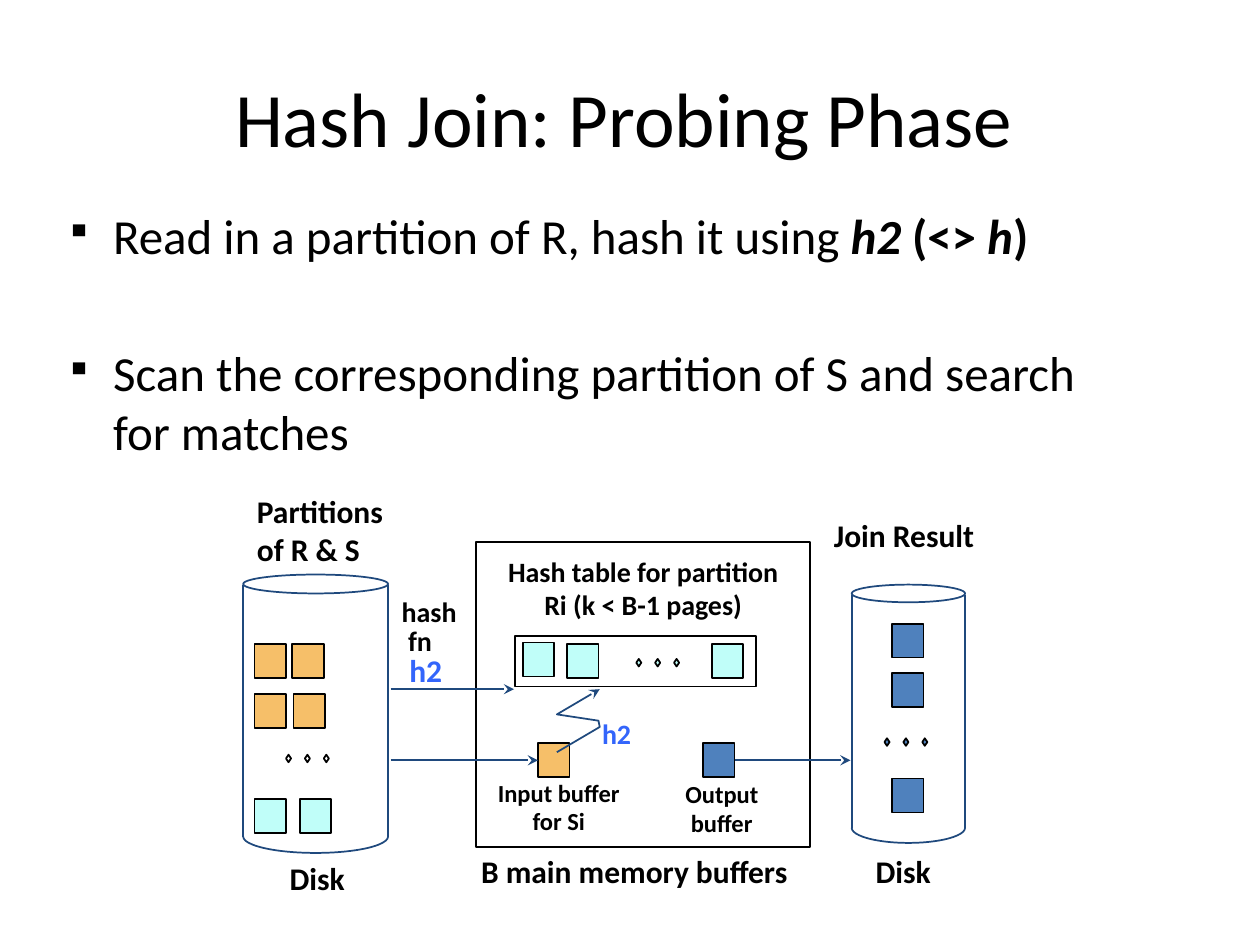
"""Build the slide that explains the probing phase of a hash join."""
from lxml import etree
from pptx import Presentation
from pptx.dml.color import RGBColor
from pptx.enum import shapes, text
from pptx.oxml import ns
from pptx.util import Inches, Pt

BLACK = RGBColor(0x00, 0x00, 0x00)
ORANGE = RGBColor(0xF6, 0xBF, 0x69)
CYAN = RGBColor(0xC0, 0xFE, 0xF9)
BLUE = RGBColor(0x4F, 0x81, 0xBD)
NAVY = RGBColor(0x1F, 0x49, 0x7D)
BRIGHT_BLUE = RGBColor(0x33, 0x65, 0xFB)
FONT = "Calibri"
LEFT, CENTER = text.PP_ALIGN.LEFT, text.PP_ALIGN.CENTER
RECTANGLE = shapes.MSO_SHAPE.RECTANGLE
STRAIGHT = shapes.MSO_CONNECTOR.STRAIGHT
PAGE = (0.25, 0.27)

presentation = Presentation()
presentation.slide_width, presentation.slide_height = Inches(10), Inches(7.5)
slide = presentation.slides.add_slide(presentation.slide_layouts[6])


def add_text(content, box, size=18, bold=True, color=BLACK, align=LEFT, wrap=False):
    shape = slide.shapes.add_textbox(*map(Inches, box))
    frame = shape.text_frame
    frame.text = content
    frame.word_wrap = wrap
    if not wrap:
        frame.auto_size = text.MSO_AUTO_SIZE.SHAPE_TO_FIT_TEXT
    for paragraph in frame.paragraphs:
        paragraph.alignment = align
        for run in paragraph.runs:
            run.font.name, run.font.size = FONT, Pt(size)
            run.font.bold, run.font.color.rgb = bold, color
    return frame


def style(shape, line=BLACK, fill=None, arrow=False):
    shape.line.color.rgb, shape.line.width = line, Pt(1)
    if fill is not None:
        shape.fill.solid()
        shape.fill.fore_color.rgb = fill
    elif hasattr(shape, "fill"):
        shape.fill.background()
    properties = shape.element.spPr
    if arrow:
        outline = properties.find(ns.qn("a:ln"))
        etree.SubElement(outline, ns.qn("a:tailEnd"), type="stealth")
    etree.SubElement(properties, ns.qn("a:effectLst"))
    return shape


title = add_text("Hash Join: Probing Phase", (0.08, 0.3, 9.75, 1.25),
                 size=44, bold=False, align=CENTER, wrap=True)
title.vertical_anchor = text.MSO_ANCHOR.MIDDLE

body = add_text("Read in a partition of R, hash it using \n"
                "Scan the corresponding partition of S and search \vfor matches",
                (0.42, 1.58, 9.25, 5.42), size=28, bold=False, wrap=True)
for words, italic in (("h2", True), (" (<> ", False), ("h", True), (")", False)):
    run = body.paragraphs[0].add_run()
    run.text = words
    run.font.name, run.font.size = FONT, Pt(28)
    run.font.bold, run.font.italic, run.font.color.rgb = True, italic, BLACK
for paragraph, space in zip(body.paragraphs, (6, 45)):
    paragraph.space_before = Pt(space)
    bullet = paragraph._p.get_or_add_pPr()
    bullet.set("marL", str(Inches(0.38)))
    bullet.set("indent", str(Inches(-0.38)))
    etree.SubElement(bullet, ns.qn("a:buSzPct"), val="75000")
    etree.SubElement(bullet, ns.qn("a:buChar"), char="▪")

for left, top, width, height, sag, bottom in (
    (1.93, 4.56, 1.15, 0.15, 0.13, 6.64),
    (6.76, 4.64, 0.9, 0.14, 0.12, 6.57),
):
    style(slide.shapes.add_shape(shapes.MSO_SHAPE.OVAL, *map(
        Inches, (left, top, width, height))), line=NAVY)
    for x in (left, left + width):
        style(slide.shapes.add_connector(STRAIGHT, *map(
            Inches, (x, top + 0.08, x, bottom))), line=NAVY)
    arc = slide.shapes.add_shape(shapes.MSO_SHAPE.ARC, *map(
        Inches, (left, bottom - sag, width, 2 * sag)))
    arc.adjustments[0], arc.adjustments[1] = 0, 108
    style(arc, line=NAVY)

for box in ((3.78, 4.3, 2.65, 2.42), (4.09, 5.05, 1.91, 0.4)):
    style(slide.shapes.add_shape(RECTANGLE, *map(Inches, box)))

pages = {
    ORANGE: ((2.02, 5.11), (2.32, 5.11), (2.02, 5.51), (2.33, 5.51)),
    CYAN: ((2.38, 6.34), (2.02, 6.34), (4.15, 5.1), (4.5, 5.11), (5.65, 5.11)),
    BLUE: ((7.08, 4.95), (7.08, 5.34), (7.08, 6.18)),
}
for color, places in pages.items():
    for place in places:
        style(slide.shapes.add_shape(RECTANGLE, *map(Inches, place + PAGE)), fill=color)

input_buffer, output_buffer = [
    style(slide.shapes.add_shape(RECTANGLE, *map(Inches, (left, 5.9) + PAGE)), fill=color)
    for left, color in ((4.27, ORANGE), (5.58, BLUE))
]

for left, top, color in ((2.27, 5.99, None), (5.05, 5.23, CYAN), (7.02, 5.86, BLUE)):
    for step in range(3):
        style(slide.shapes.add_shape(shapes.MSO_SHAPE.DIAMOND, *map(
            Inches, (left + 0.15 * step, top, 0.04, 0.06))), fill=color)

for content, box, size, color, align in (
    ("Partitions\nof R & S", (1.94, 3.86, 1.25, 0.7), 18, BLACK, LEFT),
    ("Hash table for partition\nRi (k < B-1 pages)", (3.88, 4.35, 2.45, 0.63), 16, BLACK, CENTER),
    ("Output\n buffer", (5.34, 6.13, 0.85, 0.56), 14, BLACK, LEFT),
    ("B main memory buffers", (3.72, 6.71, 2.75, 0.4), 18, BLACK, LEFT),
    ("Disk", (2.2, 6.77, 0.68, 0.4), 18, BLACK, LEFT),
    ("Disk", (6.85, 6.71, 0.68, 0.4), 18, BLACK, LEFT),
    ("Join Result", (6.52, 4.05, 1.4, 0.4), 18, BLACK, LEFT),
    ("hash", (3.09, 4.67, 0.64, 0.36), 16, BLACK, LEFT),
    ("fn", (3.14, 4.9, 0.4, 0.36), 16, BLACK, LEFT),
    ("h2", (3.15, 5.12, 0.46, 0.4), 18, BRIGHT_BLUE, LEFT),
    ("h2", (4.68, 5.64, 0.43, 0.36), 16, BRIGHT_BLUE, LEFT),
):
    add_text(content, box, size=size, color=color, align=align)
input_label = add_text("Input buffer\nfor Si", (3.82, 6.23, 1.23, 0.45), size=14, align=CENTER)
input_label.paragraphs[0].line_spacing = 0.5

buffer_middle = input_buffer.top + input_buffer.height // 2
hash_arrow, input_arrow, output_arrow = [
    style(slide.shapes.add_connector(STRAIGHT, Inches(start), y, Inches(end), y),
          line=NAVY, arrow=True)
    for start, end, y in (
        (3.1, 4.08, Inches(5.47)), (3.1, 4.27, buffer_middle), (5.83, 6.75, buffer_middle))
]
input_arrow.end_connect(input_buffer, 1)
output_arrow.begin_connect(output_buffer, 3)

probe = slide.shapes.build_freeform(Inches(4.42), Inches(5.97))
probe.add_line_segments(
    [(Inches(x), Inches(y)) for x, y in ((4.76, 5.77), (4.75, 5.72), (4.42, 5.67), (4.76, 5.47))],
    close=False)
style(probe.convert_to_shape(), line=NAVY, arrow=True)

presentation.save("out.pptx")
